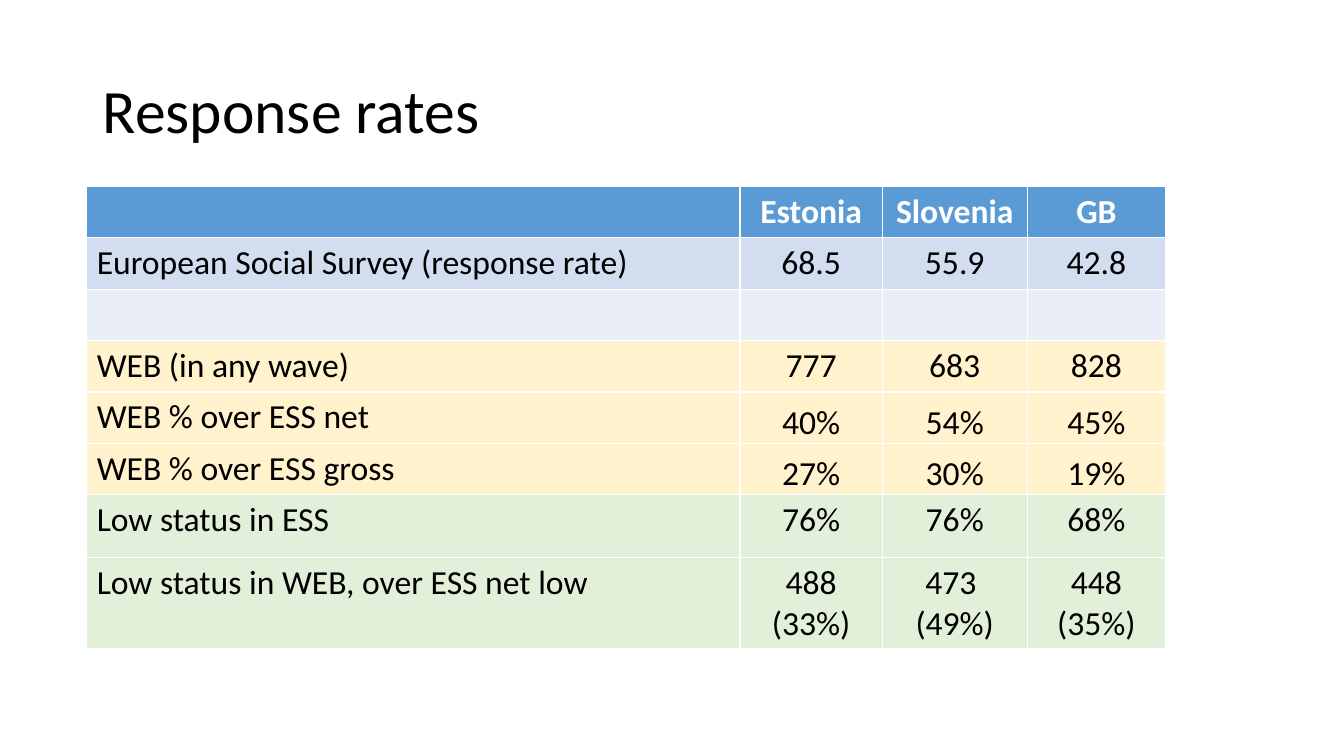
from pptx import Presentation
from pptx.dml.color import RGBColor
from pptx.enum.text import MSO_ANCHOR, PP_ALIGN
from pptx.util import Inches, Pt

FONT = "Calibri"
BLACK = RGBColor(0x00, 0x00, 0x00)
WHITE = RGBColor(0xFF, 0xFF, 0xFF)
HEADER_BLUE = RGBColor(0x5B, 0x9B, 0xD5)
LIGHT_BLUE = RGBColor(0xD2, 0xDE, 0xEF)
PALE_BLUE = RGBColor(0xEA, 0xEF, 0xF7)
CREAM = RGBColor(0xFF, 0xF2, 0xCC)
LIGHT_GREEN = RGBColor(0xE2, 0xF0, 0xD9)

COLUMN_WIDTHS = [6.48, 1.41, 1.44, 1.37]
LINE_HEIGHT = 0.51
# Each row: height, fill, cell texts
ROWS = [
    (LINE_HEIGHT, HEADER_BLUE, ["", "Estonia", "Slovenia", "GB"]),
    (LINE_HEIGHT, LIGHT_BLUE,
     ["European Social Survey (response rate)", "68.5", "55.9", "42.8"]),
    (LINE_HEIGHT, PALE_BLUE, ["", "", "", ""]),
    (LINE_HEIGHT, CREAM, ["WEB (in any wave)", "777", "683", "828"]),
    (LINE_HEIGHT, CREAM, ["WEB % over ESS net", "40%", "54%", "45%"]),
    (LINE_HEIGHT, CREAM, ["WEB % over ESS gross", "27%", "30%", "19%"]),
    (0.62, LIGHT_GREEN, ["Low status in ESS", "76%", "76%", "68%"]),
    (0.91, LIGHT_GREEN,
     ["Low status in WEB, over ESS net low", "488 (33%)", "473 \n(49%)", "448\n(35%)"]),
]
BOTTOM_ROWS = (4, 5)


def add_run(paragraph, text, size, color, bold=False):
    run = paragraph.add_run()
    run.text = text
    run.font.name = FONT
    run.font.size = Pt(size)
    run.font.bold = bold
    run.font.color.rgb = color


presentation = Presentation()
presentation.slide_width = Inches(13.33)
presentation.slide_height = Inches(7.5)
slide = presentation.slides.add_slide(presentation.slide_layouts[6])

title = slide.shapes.add_textbox(Inches(0.92), Inches(0.4), Inches(11.5), Inches(1.45))
title.text_frame.word_wrap = True
title.text_frame.vertical_anchor = MSO_ANCHOR.MIDDLE
title_paragraph = title.text_frame.paragraphs[0]
title_paragraph.line_spacing = 0.9
add_run(title_paragraph, "Response rates", 44, BLACK)

# The default table style supplies the white cell borders
table = slide.shapes.add_table(
    len(ROWS), len(COLUMN_WIDTHS), Inches(0.86), Inches(1.85),
    Inches(sum(COLUMN_WIDTHS)), Inches(sum(height for height, _, _ in ROWS)),
).table
table.horz_banding = False
for column, width in zip(table.columns, COLUMN_WIDTHS):
    column.width = Inches(width)

for row_index, (height, fill, texts) in enumerate(ROWS):
    table.rows[row_index].height = Inches(height)
    is_header = row_index == 0
    for column_index, text in enumerate(texts):
        cell = table.cell(row_index, column_index)
        cell.fill.solid()
        cell.fill.fore_color.rgb = fill
        if row_index in BOTTOM_ROWS and column_index > 0:
            cell.vertical_anchor = MSO_ANCHOR.BOTTOM
            cell.margin_left = cell.margin_right = cell.margin_top = Inches(0.01)
            cell.margin_bottom = 0
        if not text:
            continue
        for line_index, line in enumerate(text.split("\n")):
            frame = cell.text_frame
            paragraph = frame.add_paragraph() if line_index else frame.paragraphs[0]
            paragraph.alignment = PP_ALIGN.CENTER if column_index else PP_ALIGN.LEFT
            add_run(paragraph, line, 24, WHITE if is_header else BLACK, is_header)

presentation.save("out.pptx")
